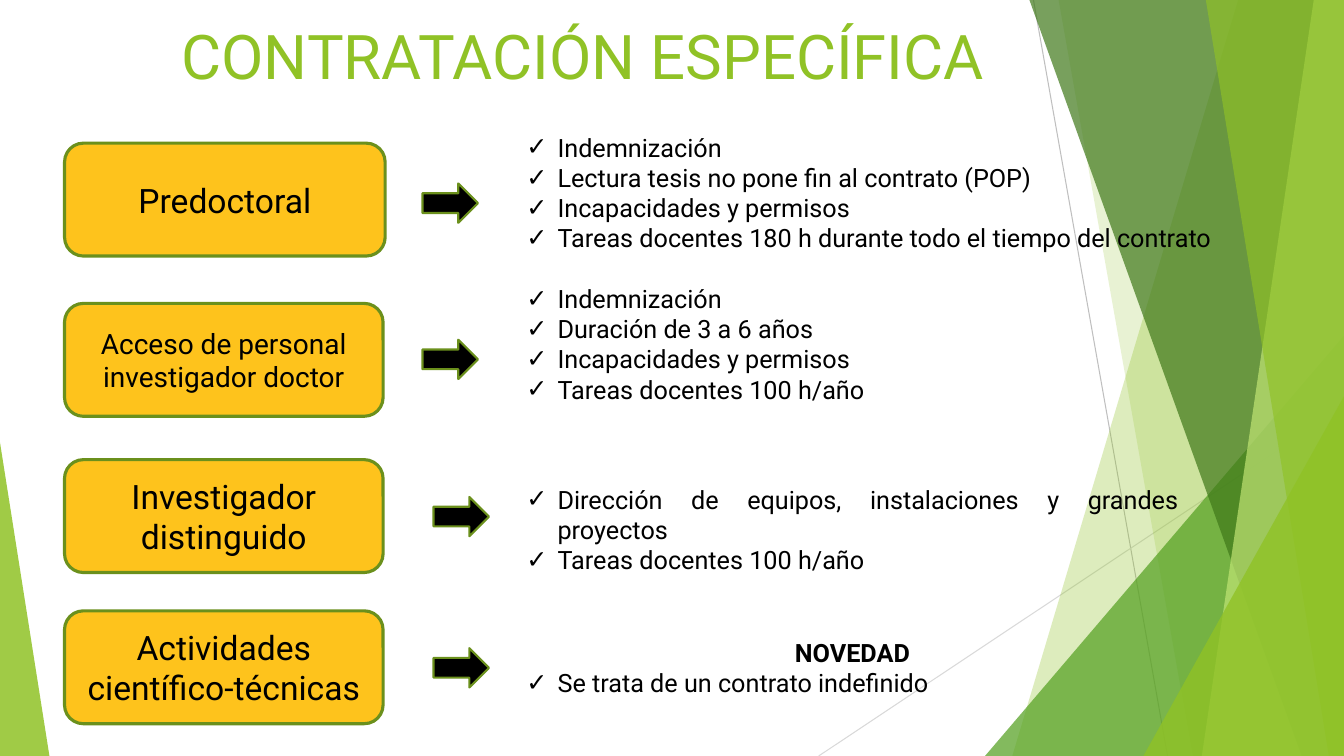
from lxml.etree import SubElement
from pptx import Presentation
from pptx.dml.color import RGBColor
from pptx.enum.shapes import MSO_CONNECTOR, MSO_SHAPE
from pptx.enum.text import MSO_ANCHOR, MSO_AUTO_SIZE, PP_ALIGN
from pptx.oxml.ns import qn
from pptx.util import Emu, Inches, Pt

BLACK = RGBColor(0x00, 0x00, 0x00)
AMBER = RGBColor(0xFE, 0xC3, 0x1C)
OLIVE = RGBColor(0x6B, 0x90, 0x1C)
LIME = RGBColor(0x90, 0xC2, 0x26)
LEAF = RGBColor(0x54, 0xA0, 0x21)
FOREST = RGBColor(0x3F, 0x78, 0x19)
PALE_LIME = RGBColor(0xC0, 0xE4, 0x74)
GREY = RGBColor(0xBF, 0xBF, 0xBF)
LIGHT_GREY = RGBColor(0xD9, 0xD9, 0xD9)

FONT = "Roboto"
WIDTH, HEIGHT = 13.33, 7.5
BOX_LEFT, BOX_WIDTH, BOX_HEIGHT = 0.64, 3.16, 1.12
ARROW_WIDTH, ARROW_HEIGHT = 0.55, 0.39
LIST_LEFT, LIST_WIDTH = 5.12, 6.67
LINE_HEIGHT, LIST_PADDING = 0.3, 0.1
HANGING = 0.31

TITLE = "CONTRATACIÓN ESPECÍFICA"
CONTRACTS = [
    {"name": "Predoctoral", "size": 24, "top": 1.42, "arrow": (4.19, 1.82),
     "list_top": 1.26, "lines": 4, "list_width": 7.46, "box_width": 3.18,
     "points": ["Indemnización", "Lectura tesis no pone fin al contrato (POP)",
                "Incapacidades y permisos",
                "Tareas docentes 180 h durante todo el tiempo del contrato"]},
    {"name": "Acceso de personal investigador doctor", "size": 20, "top": 3.01,
     "arrow": (4.19, 3.37), "list_top": 2.76, "lines": 4,
     "points": ["Indemnización", "Duración de 3 a 6 años",
                "Incapacidades y permisos", "Tareas docentes 100 h/año"]},
    {"name": "Investigador distinguido", "size": 24, "top": 4.56,
     "arrow": (4.3, 4.93), "list_top": 4.75, "lines": 3,
     "points": ["Dirección de equipos, instalaciones y grandes proyectos",
                "Tareas docentes 100 h/año"]},
    {"name": "Actividades científico-técnicas", "size": 24, "top": 6.06,
     "arrow": (4.3, 6.43), "list_top": 6.27, "lines": 2, "heading": "NOVEDAD",
     "points": ["Se trata de un contrato indefinido"]},
]
RAYS = [((10.25, 0), (11.58, HEIGHT), GREY),
        ((WIDTH, 4.03), (8.12, HEIGHT), LIGHT_GREY)]
BANDS = [
    {"top_left": 12.28, "bottom_left": 10.04, "color": LIME, "opacity": 30},
    {"top_left": 10.5, "bottom_left": 11.83, "color": LIME, "opacity": 20},
    {"triangle": (9.77, 3.33, 3.56), "apex": 1, "color": LEAF, "opacity": 72},
    {"top_left": 10.21, "bottom_left": 12.91, "color": FOREST, "opacity": 70},
    {"top_left": 13.03, "bottom_left": 11.92, "color": PALE_LIME, "opacity": 70},
    {"top_left": 11.96, "bottom_left": 13.18, "color": LIME, "opacity": 65},
    {"triangle": (11.34, 3.93, 1.99), "apex": 1, "color": LIME, "opacity": 80},
    {"triangle": (0, 4.39, 0.49), "apex": 0, "color": LIME, "opacity": 85},
]


def write(para, text, size=18, color=BLACK, bold=False, align=PP_ALIGN.LEFT, bullet=None):
    para.alignment = align
    para.space_before = Pt(0)
    span = para.add_run()
    span.text = text
    span.font.name, span.font.size, span.font.bold = FONT, Pt(size), bold
    span.font.color.rgb = color
    properties = para._p.get_or_add_pPr()
    indent = Inches(HANGING) if bullet else Emu(0)
    properties.set("marL", str(indent))
    properties.set("indent", str(-indent))
    if bullet:
        SubElement(properties, qn("a:buChar")).set("char", bullet)
    else:
        SubElement(properties, qn("a:buNone"))


def place(shape, left, top, width, height):
    shape.left, shape.top = Inches(left), Inches(top)
    shape.width, shape.height = Inches(width), Inches(height)


def paint(shape, color, line=None, line_width=0, opacity=100):
    shape.shadow.inherit = False
    shape.fill.solid()
    shape.fill.fore_color.rgb = color
    if opacity < 100:
        tint = shape.fill._xPr.find(qn("a:solidFill"))[0]
        SubElement(tint, qn("a:alpha")).set("val", str(opacity * 1000))
    if line is None:
        shape.line.fill.background()
    else:
        shape.line.color.rgb = line
        shape.line.width = Pt(line_width)


def add_preset(page, kind, left, top, width, height):
    return page.shapes.add_shape(kind, Inches(left), Inches(top), Inches(width), Inches(height))


def add_ray(page, start, end, color):
    ray = page.shapes.add_connector(MSO_CONNECTOR.STRAIGHT, *map(Inches, start + end))
    ray.line.color.rgb = color
    ray.line.width = Pt(0.75)
    SubElement(ray._element.spPr, qn("a:effectLst"))


def add_band(page, band):
    if "triangle" in band:
        left, top, width = band["triangle"]
        shape = add_preset(page, MSO_SHAPE.ISOSCELES_TRIANGLE, left, top, width, HEIGHT - top)
        shape.adjustments[0] = band["apex"]
    else:
        outline = page.shapes.build_freeform(Inches(band["top_left"]), 0)
        corners = [(WIDTH, 0), (WIDTH, HEIGHT), (band["bottom_left"], HEIGHT)]
        outline.add_line_segments([(Inches(x), Inches(y)) for x, y in corners], close=True)
        shape = outline.convert_to_shape()
    paint(shape, band["color"], opacity=band["opacity"])


def add_contract(page, contract, body):
    box = add_preset(page, MSO_SHAPE.ROUNDED_RECTANGLE, BOX_LEFT, contract["top"],
                     contract.get("box_width", BOX_WIDTH), BOX_HEIGHT)
    paint(box, AMBER, OLIVE, 2.25)
    box.text_frame.vertical_anchor = MSO_ANCHOR.MIDDLE
    write(box.text_frame.paragraphs[0], contract["name"], size=contract["size"],
          align=PP_ALIGN.CENTER)

    arrow = add_preset(page, MSO_SHAPE.RIGHT_ARROW, *contract["arrow"], ARROW_WIDTH, ARROW_HEIGHT)
    paint(arrow, BLACK, OLIVE, 1.5)

    place(body, LIST_LEFT, contract["list_top"], contract.get("list_width", LIST_WIDTH),
          contract["lines"] * LINE_HEIGHT + LIST_PADDING)
    frame = body.text_frame
    frame.word_wrap = True
    frame.auto_size = MSO_AUTO_SIZE.SHAPE_TO_FIT_TEXT
    frame.vertical_anchor = MSO_ANCHOR.TOP
    entries = [(point, {"align": PP_ALIGN.JUSTIFY, "bullet": "✓"}) for point in contract["points"]]
    if "heading" in contract:
        entries.insert(0, (contract["heading"], {"align": PP_ALIGN.CENTER, "bold": True}))
    for number, (text, look) in enumerate(entries):
        para = frame.add_paragraph() if number else frame.paragraphs[0]
        write(para, text, **look)


def main():
    deck = Presentation()
    deck.slide_width, deck.slide_height = Inches(WIDTH), Inches(HEIGHT)
    page = deck.slides.add_slide(deck.slide_layouts.get_by_name("Comparison"))
    title, *bodies = list(page.placeholders)

    for ray in RAYS:
        add_ray(page, *ray)
    for band in BANDS:
        add_band(page, band)
    for contract, body in zip(CONTRACTS, bodies):
        add_contract(page, contract, body)

    place(title, 1.7, 0.1, 8.94, 0.86)
    title.text_frame.auto_size = MSO_AUTO_SIZE.NONE
    title.text_frame.vertical_anchor = MSO_ANCHOR.BOTTOM
    write(title.text_frame.paragraphs[0], TITLE, size=44, color=LIME)

    for holder in [*bodies, title]:
        holder.element.getparent().append(holder.element)
    deck.save("out.pptx")


if __name__ == "__main__":
    main()
